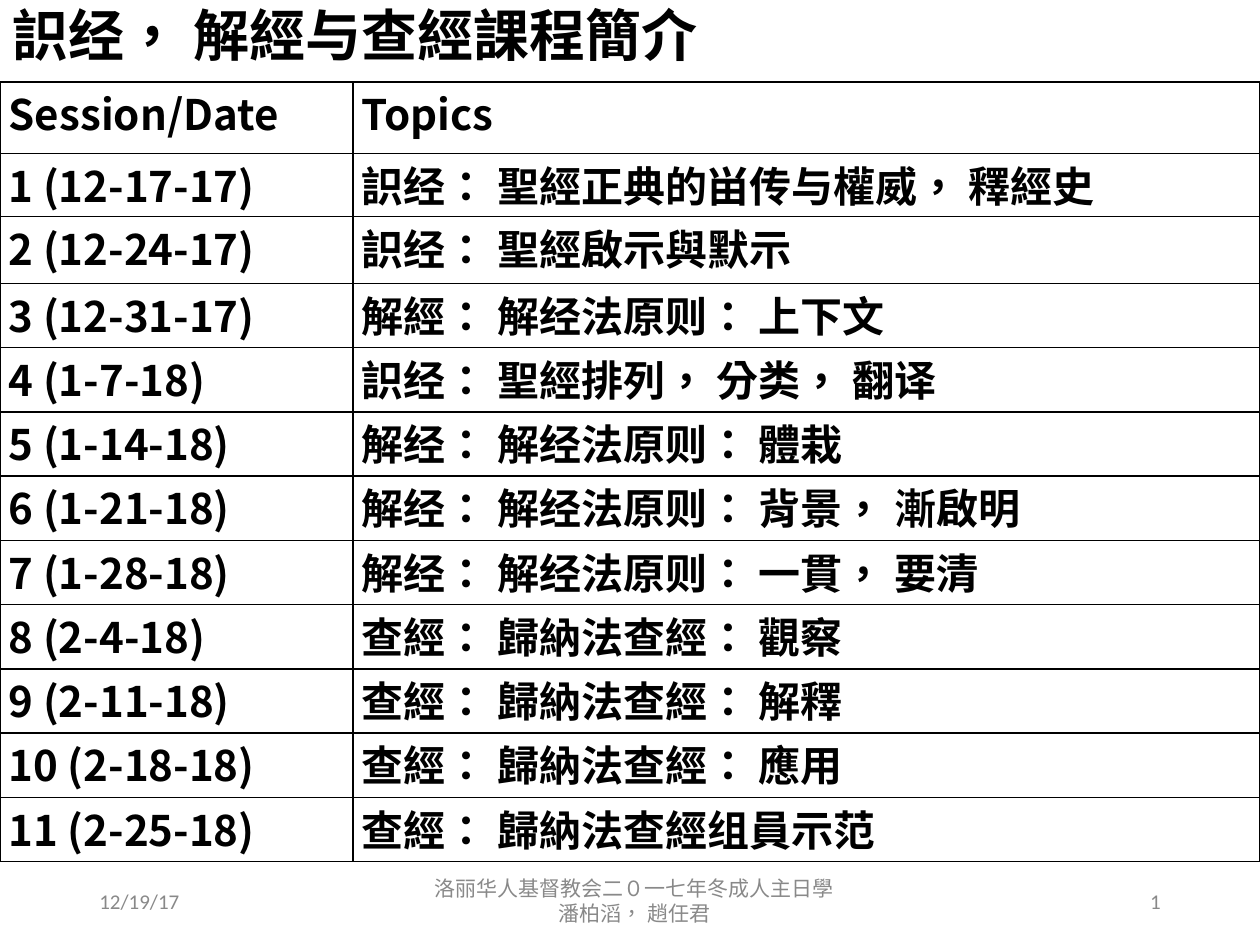
from typing import NamedTuple

from lxml import etree
from pptx import Presentation
from pptx.dml.color import RGBColor
from pptx.enum.text import MSO_ANCHOR, PP_ALIGN
from pptx.oxml.ns import qn
from pptx.util import Inches, Pt

LEFT, CENTER, RIGHT = PP_ALIGN.LEFT, PP_ALIGN.CENTER, PP_ALIGN.RIGHT
MIDDLE = MSO_ANCHOR.MIDDLE
COLORS = {"ink": "000000", "paper": "FFFFFF", "footer": "898989"}
LATIN, CJK = "Calibri", "Noto Sans CJK SC"
WIDTH, HEIGHT = 10, 7.5
COLUMN_SHARES = (0.28, 0.72)
ROW_HEIGHTS = [0.57, 0.5, 0.53] + [0.51] * 9


class Session(NamedTuple):
    date: str
    topic: str


class FooterItem(NamedTuple):
    text: str
    left: float
    width: float
    align: PP_ALIGN


SESSIONS = [
    Session("12-17-17", "䛊经： 聖經正典的畄传与權威， 釋經史"),
    Session("12-24-17", "䛊经： 聖經啟示與默示"),
    Session("12-31-17", "解經： 解经法原则： 上下文"),
    Session("1-7-18", "䛊经： 聖經排列， 分类， 翻译"),
    Session("1-14-18", "解经： 解经法原则： 體栽"),
    Session("1-21-18", "解经： 解经法原则： 背景， 漸啟明"),
    Session("1-28-18", "解经： 解经法原则： 一貫， 要清"),
    Session("2-4-18", "查經： 歸納法查經： 觀察"),
    Session("2-11-18", "查經： 歸納法查經： 解釋"),
    Session("2-18-18", "查經： 歸納法查經： 應用"),
    Session("2-25-18", "查經： 歸納法查經组員示范"),
]

FOOTER = [
    FooterItem("12/19/17", 0.69, 2.25, LEFT),
    FooterItem("洛丽华人基督教会二０一七年冬成人主日學\v潘柏滔， 趙任君", 3.31, 3.45, CENTER),
    FooterItem("1", 7.06, 2.25, RIGHT),
]


def write(frame, text: str, *, size: float, font: str = LATIN, color: str = "ink",
          bold: bool = False, align: PP_ALIGN = LEFT, line_spacing: float = 1.0) -> None:
    """Fill a text frame with one formatted paragraph."""
    frame.word_wrap = True
    para = frame.paragraphs[0]
    para.text = text
    para.alignment = align
    para.line_spacing = line_spacing
    for span in para.runs:
        span.font.name = font
        span.font.size = Pt(size)
        span.font.bold = bold
        span.font.color.rgb = RGBColor.from_string(COLORS[color])
        properties = span.font._element
        properties.set("lang", "zh-TW")
        etree.SubElement(properties, qn("a:ea")).set("typeface", CJK)


def add_borders(cell, color: str = "ink", points: float = 1) -> None:
    """Draw a solid line on all four sides of a cell."""
    properties = cell._tc.get_or_add_tcPr()
    for index, side in enumerate(("a:lnL", "a:lnR", "a:lnT", "a:lnB")):
        line = etree.Element(qn(side), w=str(Pt(points)))
        fill = etree.SubElement(line, qn("a:solidFill"))
        etree.SubElement(fill, qn("a:srgbClr")).set("val", COLORS[color])
        properties.insert(index, line)


def fill_cell(cell, text: str) -> None:
    cell.margin_left = cell.margin_right = Inches(0.07)
    cell.margin_top = cell.margin_bottom = 0
    cell.fill.solid()
    cell.fill.fore_color.rgb = RGBColor.from_string(COLORS["paper"])
    add_borders(cell)
    write(cell.text_frame, text, size=24, font=CJK, bold=True)


def add_schedule(page) -> None:
    rows = [("Session/Date", "Topics")]
    rows += [(f"{number} ({session.date})", session.topic)
             for number, session in enumerate(SESSIONS, 1)]
    table = page.shapes.add_table(
        len(rows), len(COLUMN_SHARES), 0, Inches(0.65),
        Inches(WIDTH), Inches(sum(ROW_HEIGHTS))).table
    for column, share in zip(table.columns, COLUMN_SHARES):
        column.width = Inches(WIDTH * share)
    for row, height, texts in zip(table.rows, ROW_HEIGHTS, rows):
        row.height = Inches(height)
        for cell, text in zip(row.cells, texts):
            fill_cell(cell, text)


def add_footer_item(page, item: FooterItem) -> None:
    box = page.shapes.add_textbox(
        Inches(item.left), Inches(6.95), Inches(item.width), Inches(0.4))
    box.text_frame.vertical_anchor = MIDDLE
    write(box.text_frame, item.text, size=12, color="footer", align=item.align)


def main() -> None:
    deck = Presentation()
    deck.slide_width, deck.slide_height = Inches(WIDTH), Inches(HEIGHT)
    page = deck.slides.add_slide(deck.slide_layouts[5])

    # Title
    title = page.shapes.title
    title.left, title.top = 0, 0
    title.width, title.height = Inches(WIDTH * 0.9), Inches(0.61)
    title.text_frame.vertical_anchor = MIDDLE
    write(title.text_frame, "䛊经， 解經与查經課程簡介", size=32, bold=True,
          line_spacing=0.9)

    # Course schedule
    add_schedule(page)

    # Date, class name and page number
    for item in FOOTER:
        add_footer_item(page, item)

    deck.save("out.pptx")


if __name__ == "__main__":
    main()
